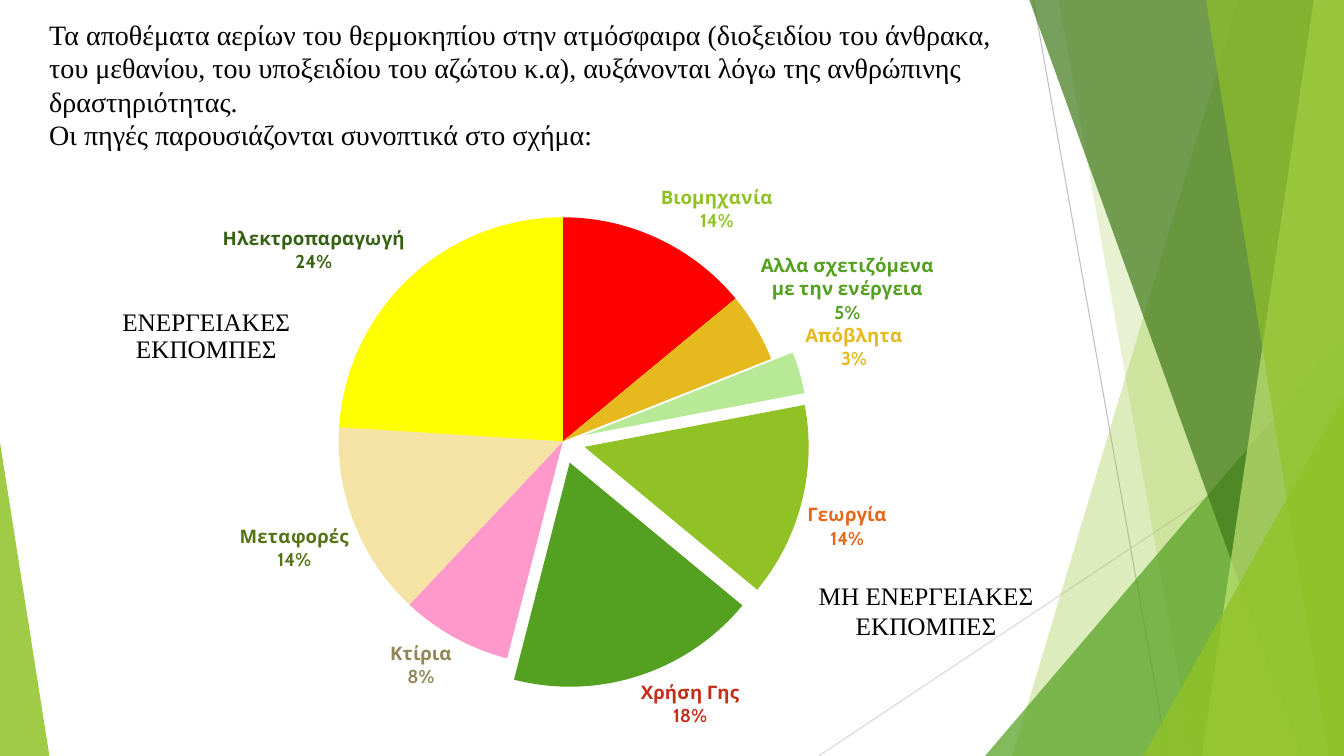
from lxml import etree
from pptx import Presentation, util as u
from pptx.chart.data import CategoryChartData
from pptx.dml.color import RGBColor
from pptx.enum import chart as ch, shapes, text
from pptx.oxml import parse_xml
from pptx.oxml.ns import nsdecls, qn

PX = 9144  # one hundredth of an inch
W, H = 1333, 750

BLACK = RGBColor(0, 0, 0)
GRAY = RGBColor(0xBF, 0xBF, 0xBF)
PALE = RGBColor(0xD9, 0xD9, 0xD9)
LIME = RGBColor(0x90, 0xC2, 0x26)
GREEN = RGBColor(0x54, 0xA0, 0x21)
DARK = RGBColor(0x3F, 0x78, 0x19)
LIGHT = RGBColor(0xC0, 0xE4, 0x74)
RED = RGBColor(0xFF, 0, 0)
GOLD = RGBColor(0xE6, 0xB9, 0x1E)
MINT = RGBColor(0xB7, 0xE9, 0x96)
PINK = RGBColor(0xFF, 0x99, 0xCC)
CREAM = RGBColor(0xF5, 0xE3, 0xA5)
YELLOW = RGBColor(0xFF, 0xFF, 0)
ORANGE = RGBColor(0xE7, 0x66, 0x18)
BRICK = RGBColor(0xC4, 0x2F, 0x1A)
KHAKI = RGBColor(0x91, 0x86, 0x55)
OLIVE = RGBColor(0x56, 0x74, 0x17)
FOREST = RGBColor(0x36, 0x61, 0x13)

SERIF, SANS = "Times New Roman", "Cabin"

# name, share, slice colour, label colour, pulled out by (%)
SLICES = [
    ("Βιομηχανία", 14, RED, LIME, 0),
    ("Αλλα σχετιζόμενα με την ενέργεια", 5, GOLD, GREEN, 0),
    ("Απόβλητα", 3, MINT, GOLD, 10),
    ("Γεωργία", 14, LIME, ORANGE, 10),
    ("Χρήση Γης", 18, GREEN, BRICK, 10),
    ("Κτίρια", 8, PINK, KHAKI, 0),
    ("Μεταφορές", 14, CREAM, OLIVE, 0),
    ("Ηλεκτροπαραγωγή", 24, YELLOW, FOREST, 0),
]


def style(font, size=18, color=BLACK, name=SERIF, bold=False):
    font.size, font.name, font.bold = u.Pt(size), name, bold
    font.color.rgb = color


def write(frame, words, align=None, **form):
    """Fill a text frame, one paragraph for each item of words."""
    for i, line in enumerate(words):
        para = frame.paragraphs[0] if i == 0 else frame.add_paragraph()
        para.text = line
        para.alignment = align
        for run in para.runs:
            style(run.font, **form)


def place(**spots):
    """Manual chart layout from fractions and modes."""
    tags = "".join(f'<c:{k} val="{v}"/>' for k, v in spots.items())
    return parse_xml(f'<c:layout {nsdecls("c")}><c:manualLayout>{tags}'
                     "</c:manualLayout></c:layout>")


class Deck:
    def __init__(self):
        self.prs = Presentation()
        self.prs.slide_width, self.prs.slide_height = W * PX, H * PX
        self.slide = self.prs.slides.add_slide(self.prs.slide_layouts[6])
        self.items = self.slide.shapes

    def line(self, x1, y1, x2, y2, color):
        line = self.items.add_connector(
            shapes.MSO_CONNECTOR.STRAIGHT, *(v * PX for v in (x1, y1, x2, y2)))
        line.line.color.rgb, line.line.width = color, u.Pt(0.75)
        etree.SubElement(line.element.spPr, qn("a:effectLst"))

    def paint(self, shape, color, alpha):
        shape.shadow.inherit = False
        shape.line.fill.background()
        shape.fill.solid()
        shape.fill.fore_color.rgb = color
        tone = shape.element.spPr.find(".//" + qn("a:srgbClr"))
        etree.SubElement(tone, qn("a:alpha")).set("val", str(alpha * 1000))

    def band(self, top, foot, color, alpha):
        """Band from a slanted left edge to the right side of the slide."""
        form = self.items.build_freeform(top, 0, scale=PX)
        form.add_line_segments([(W, 0), (W, H), (foot, H)], close=True)
        self.paint(form.convert_to_shape(), color, alpha)

    def wedge(self, x, y, wide, color, alpha, tip):
        """Right triangle standing on the bottom of the slide."""
        shape = self.items.add_shape(
            shapes.MSO_SHAPE.ISOSCELES_TRIANGLE,
            *(v * PX for v in (x, y, wide, H - y)))
        shape.adjustments[0] = tip
        self.paint(shape, color, alpha)

    def text(self, x, y, wide, high, words, right=10, **form):
        box = self.items.add_textbox(*(v * PX for v in (x, y, wide, high)))
        box.text_frame.word_wrap = True
        box.text_frame.margin_right = right * PX
        write(box.text_frame, words, **form)

    def pie(self, x, y, wide, high, title, slices):
        data = CategoryChartData()
        data.categories = [s[0] for s in slices]
        data.add_series("Series 1", [s[1] for s in slices])
        chart = self.items.add_chart(
            ch.XL_CHART_TYPE.PIE, *(v * PX for v in (x, y, wide, high)), data).chart
        style(chart.font, size=10, name=SANS)
        chart.has_legend = False
        plot = chart.plots[0]
        plot.vary_by_categories = True

        # Title beside the pie
        chart.has_title = True
        write(chart.chart_title.text_frame, title, align=text.PP_ALIGN.CENTER)
        head = chart.element.find(".//" + qn("c:title"))
        for old in head.findall(qn("c:layout")):
            head.remove(old)
        head.find(qn("c:tx")).addnext(
            place(xMode="edge", yMode="edge", x=0.03, y=0.27))

        # Plot area
        area = chart.element.find(".//" + qn("c:plotArea"))
        for old in area.findall(qn("c:layout")):
            area.remove(old)
        area.insert(0, place(layoutTarget="inner", xMode="edge", yMode="edge",
                             x=0.26, y=0.09, w=0.47, h=0.83))

        # Slices and their labels
        row = plot.series[0]
        for i, (_, _, color, ink, pull) in enumerate(slices):
            point = row.points[i]
            point.format.fill.solid()
            point.format.fill.fore_color.rgb = color
            point.format.line.fill.background()
            if pull:
                dot = row._element.findall(qn("c:dPt"))[i]
                dot.find(qn("c:spPr")).addprevious(parse_xml(
                    f'<c:explosion {nsdecls("c")} val="{pull}"/>'))
            style(point.data_label.font, size=13.3, color=ink, name=SANS, bold=True)
            point.data_label.position = ch.XL_LABEL_POSITION.OUTSIDE_END
        for label in row._element.iter(qn("c:dLbl")):
            for tag, on in (("Val", 0), ("CatName", 1), ("Percent", 1)):
                label.find(qn("c:show" + tag)).set("val", str(on))
            gap = etree.SubElement(label, qn("c:separator"))
            gap.text = "\n"
        tags = row.data_labels
        tags.show_value, tags.show_category_name, tags.show_percentage = False, True, True


def main():
    deck = Deck()

    # Green facets at the sides
    deck.line(1025, 0, 1158, H, GRAY)
    deck.line(W, 403, 812, H, PALE)
    deck.band(1228, 1004, LIME, 30)
    deck.band(1050, 1183, LIME, 20)
    deck.wedge(977, 333, 356, GREEN, 72, tip=1)
    deck.band(1021, 1291, DARK, 70)
    deck.band(1303, 1192, LIGHT, 70)
    deck.band(1196, 1318, LIME, 65)
    deck.wedge(1134, 393, 199, LIME, 80, tip=1)
    deck.wedge(0, 439, 49, LIME, 85, tip=0)

    # Heading
    deck.text(39, 12, 1116, 206, [
        "Τα αποθέματα αερίων του θερμοκηπίου στην ατμόσφαιρα (διοξειδίου του άνθρακα,\v"
        "του μεθανίου, του υποξειδίου του αζώτου κ.α), αυξάνονται λόγω της ανθρώπινης "
        "δραστηριότητας.\vΟι πηγές παρουσιάζονται συνοπτικά στο σχήμα:"],
        right=40, size=20)

    # Emission sources
    deck.pie(90, 145, 946, 580, ["ΕΝΕΡΓΕΙΑΚΕΣ", "ΕΚΠΟΜΠΕΣ"], SLICES)
    deck.text(787, 571, 263, 71, ["ΜΗ ΕΝΕΡΓΕΙΑΚΕΣ ΕΚΠΟΜΠΕΣ"],
              align=text.PP_ALIGN.CENTER)

    deck.prs.save("out.pptx")


if __name__ == "__main__":
    main()
